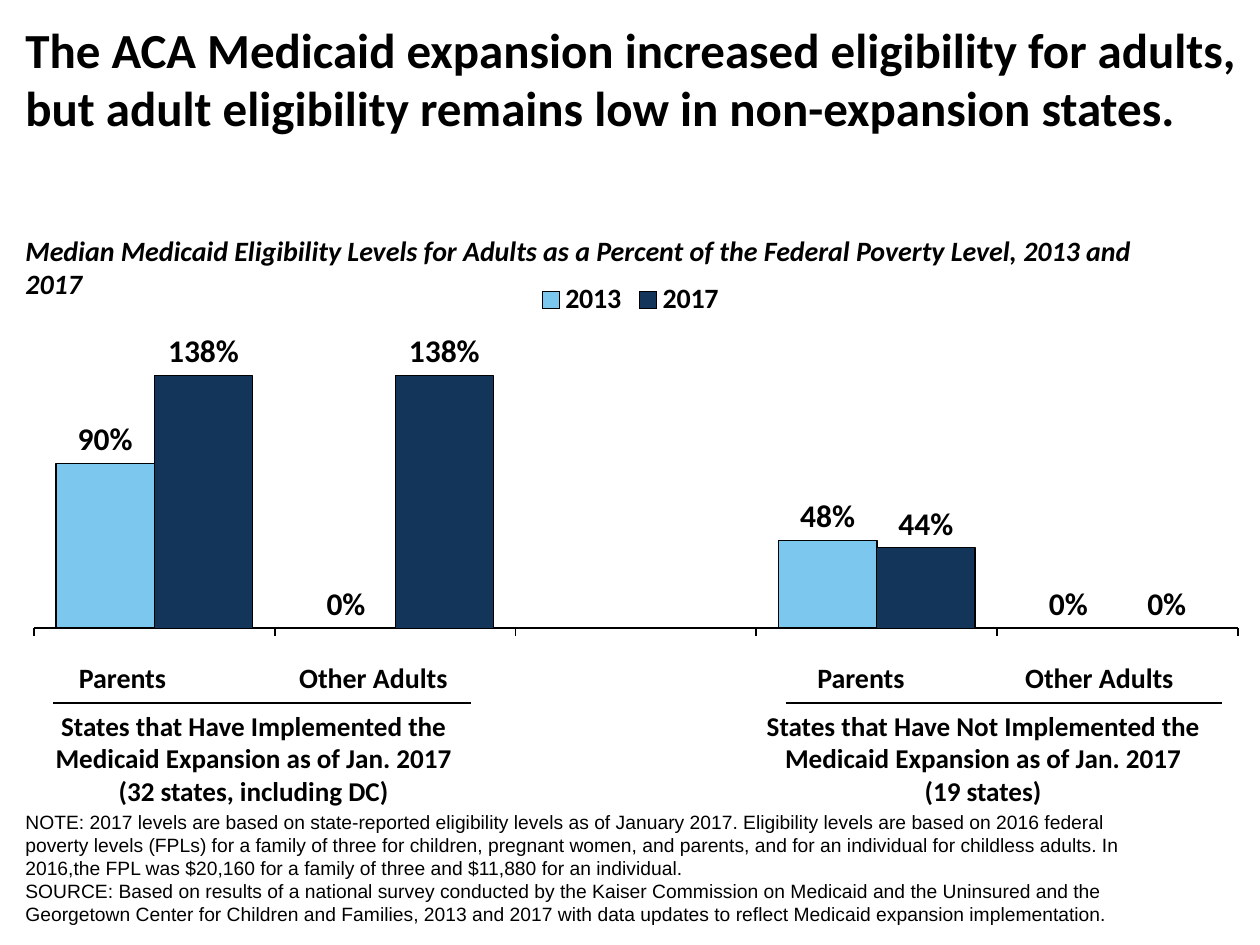
from lxml import etree
from pptx import Presentation
from pptx.chart.data import CategoryChartData
from pptx.dml.color import RGBColor
from pptx.enum.chart import (XL_CHART_TYPE, XL_LABEL_POSITION, XL_LEGEND_POSITION,
                             XL_TICK_LABEL_POSITION, XL_TICK_MARK)
from pptx.enum.shapes import MSO_CONNECTOR
from pptx.enum.text import MSO_ANCHOR, PP_ALIGN
from pptx.oxml import parse_xml
from pptx.oxml.ns import nsdecls, qn
from pptx.util import Emu, Pt

BLACK = RGBColor(0x00, 0x00, 0x00)
LIGHT_BLUE = RGBColor(0x7B, 0xC7, 0xED)
NAVY = RGBColor(0x13, 0x35, 0x59)

CLUSTERED = XL_CHART_TYPE.COLUMN_CLUSTERED
OUTSIDE_END = XL_LABEL_POSITION.OUTSIDE_END
LEGEND_TOP = XL_LEGEND_POSITION.TOP
NO_LABELS = XL_TICK_LABEL_POSITION.NONE
TICK_OUTSIDE, TICK_NONE = XL_TICK_MARK.OUTSIDE, XL_TICK_MARK.NONE
STRAIGHT = MSO_CONNECTOR.STRAIGHT
TOP, BOTTOM = MSO_ANCHOR.TOP, MSO_ANCHOR.BOTTOM
LEFT, CENTER = PP_ALIGN.LEFT, PP_ALIGN.CENTER

PX_PER_INCH = 126
BODY_FONT, NOTE_FONT = "Calibri", "Arial"


def px(length):
    return Emu(round(length * 914400 / PX_PER_INCH))


class SlideBuilder:
    """Holds the style and the current slide."""

    def __init__(self, slide, font_name=BODY_FONT, color=BLACK):
        self.slide = slide
        self.font_name = font_name
        self.color = color

    def style(self, font, size, bold=True, italic=False, name=None):
        font.name = name or self.font_name
        font.size = Pt(size)
        font.bold = bold
        font.italic = italic
        font.color.rgb = self.color

    def text(self, box, lines, size, align=LEFT, anchor=TOP, **font_style):
        shape = self.slide.shapes.add_textbox(*map(px, box))
        frame = shape.text_frame
        frame.word_wrap = True
        frame.vertical_anchor = anchor
        for index, line in enumerate(lines):
            paragraph = frame.paragraphs[0] if index == 0 else frame.add_paragraph()
            paragraph.text = line
            paragraph.alignment = align
            self.style(paragraph.font, size, **font_style)

    def rule(self, left, right, top):
        line = self.slide.shapes.add_connector(
            STRAIGHT, px(left), px(top), px(right), px(top))
        line.line.color.rgb = self.color
        line.line.width = Pt(1)
        etree.SubElement(line.element.spPr, qn("a:effectLst"))

    def column_chart(self, box, categories, series_styles, plot_area):
        data = CategoryChartData(number_format="0%")
        data.categories = categories
        for name, values, _, _ in series_styles:
            data.add_series(name, values)
        chart = self.slide.shapes.add_chart(CLUSTERED, *map(px, box), data).chart
        self.style(chart.font, 18, bold=False)
        chart.has_title = False

        # Legend
        chart.has_legend = True
        chart.legend.position = LEGEND_TOP
        chart.legend.include_in_layout = False
        self.style(chart.legend.font, 16)

        # Axes
        category_axis = chart.category_axis
        category_axis.tick_label_position = NO_LABELS
        category_axis.major_tick_mark = TICK_OUTSIDE
        category_axis.minor_tick_mark = TICK_NONE
        category_axis.format.line.color.rgb = self.color
        category_axis.format.line.width = Pt(1)
        value_axis = chart.value_axis
        value_axis.visible = False
        value_axis.has_major_gridlines = False
        value_axis.minimum_scale = 0
        value_axis.maximum_scale = 1.5
        value_axis.major_unit = 0.5

        # Columns and their labels
        plot = chart.plots[0]
        plot.gap_width = 45
        plot.overlap = 0
        plot.vary_by_categories = False
        for series, (_, _, color, line_width) in zip(plot.series, series_styles):
            series.format.fill.solid()
            series.format.fill.fore_color.rgb = color
            series.format.line.color.rgb = self.color
            series.format.line.width = Pt(line_width)
            labels = series.data_labels
            labels.show_value = True
            labels.position = OUTSIDE_END
            labels.number_format = "0%"
            labels.number_format_is_linked = False
            self.style(labels.font, 18)

        self.place_plot(chart, plot_area)

    def place_plot(self, chart, plot_area):
        plot_element = chart.element.find(f".//{qn('c:plotArea')}")
        old_layout = plot_element.find(qn("c:layout"))
        if old_layout is not None:
            plot_element.remove(old_layout)
        settings = [("layoutTarget", "inner"), ("xMode", "edge"), ("yMode", "edge"),
                    *zip("xywh", plot_area)]
        items = "".join(f'<c:{tag} val="{value}"/>' for tag, value in settings)
        plot_element.insert(0, parse_xml(
            f'<c:layout {nsdecls("c")}><c:manualLayout>{items}</c:manualLayout></c:layout>'))


def main():
    presentation = Presentation()
    presentation.slide_width, presentation.slide_height = px(1260), px(945)
    builder = SlideBuilder(presentation.slides.add_slide(presentation.slide_layouts[6]))

    # Chart: the empty third category separates the two groups of states
    builder.column_chart(
        (13, 268, 1235, 588), ["1", "2", "3", "4", "5"],
        [("2013", (0.9, 0, None, 0.48, 0), LIGHT_BLUE, 1),
         ("2017", (1.38, 1.38, None, 0.44, 0), NAVY, 0.75)],
        plot_area=(0.017, 0.146, 0.975, 0.467))

    # Notes
    builder.text(
        (13, 857, 1147, 75),
        ["NOTE: 2017 levels are based on state-reported eligibility levels as of January 2017. "
         "Eligibility levels are based on 2016 federal poverty levels (FPLs) for a family of "
         "three for children, pregnant women, and parents, and for an individual for childless "
         "adults. In 2016,the FPL was $20,160 for a family of three and $11,880 for an individual.",
         "SOURCE: Based on results of a national survey conducted by the Kaiser Commission on "
         "Medicaid and the Uninsured and the Georgetown Center for Children and Families, 2013 "
         "and 2017 with data updates to reflect Medicaid expansion implementation."],
        11, anchor=BOTTOM, bold=False, name=NOTE_FONT)

    # Title and subtitle
    builder.text(
        (13, 13, 1235, 126),
        ["The ACA Medicaid expansion increased eligibility for adults, but adult eligibility "
         "remains low in non-expansion states."], 28)
    builder.text(
        (13, 227, 1176, 81),
        ["Median Medicaid Eligibility Levels for Adults as a Percent of the Federal Poverty "
         "Level, 2013 and 2017"], 16, italic=True)

    # Group captions: (left, width) of each box, then ends of the rule
    groups = [
        ("States that Have Implemented the Medicaid Expansion as of Jan. 2017",
         "(32 states, including DC)", (26, 455), (45, 155), (265, 217), (53, 471)),
        ("States that Have Not Implemented the Medicaid Expansion as of Jan. 2017",
         "(19 states)", (738, 490), (790, 142), (973, 253), (786, 1222)),
    ]
    for caption, count, caption_span, parents_span, others_span, rule_ends in groups:
        for label, (left, width) in (("Parents", parents_span), ("Other Adults", others_span)):
            builder.text((left, 654, width, 45), [label], 16, CENTER)
        builder.rule(*rule_ends, 703)
        left, width = caption_span
        builder.text((left, 703, width, 111), [caption, count], 15.5, CENTER)

    presentation.save("out.pptx")


if __name__ == "__main__":
    main()
